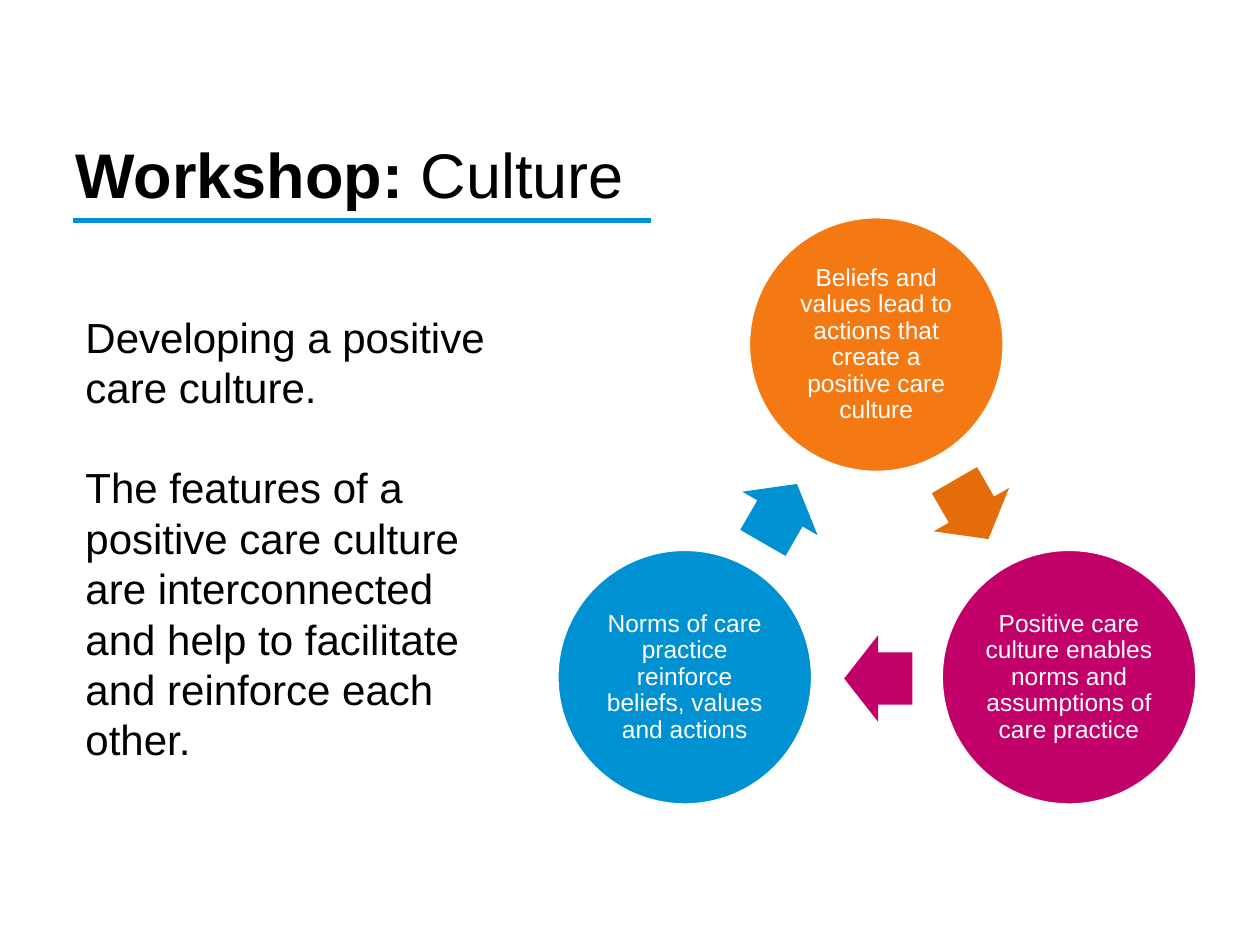
from lxml import etree
from pptx import Presentation
from pptx import util as u
from pptx.dml.color import RGBColor
from pptx.enum import shapes, text
from pptx.oxml import ns

BLACK = RGBColor(0x00, 0x00, 0x00)
WHITE = RGBColor(0xFF, 0xFF, 0xFF)
ORANGE = RGBColor(0xF5, 0x79, 0x13)
RUST = RGBColor(0xE4, 0x6C, 0x0A)
PINK = RGBColor(0xC2, 0x00, 0x6A)
BLUE = RGBColor(0x00, 0x91, 0xD3)

SIDE = 2.03
STAGES = [
    (5.94, 1.72, ORANGE,
     "Beliefs and values lead to actions that create a positive care culture"),
    (7.47, 4.36, PINK,
     "Positive care culture enables norms and assumptions of care practice"),
    (4.42, 4.36, BLUE,
     "Norms of care practice reinforce beliefs, values and actions"),
]
ARROWS = [(7.44, 3.7, 60, RUST), (6.7, 5.04, 180, PINK), (5.92, 3.73, 300, BLUE)]
BODY = [
    "Developing a positive care culture.",
    "The features of a positive care culture are interconnected "
    "and help to facilitate and reinforce each other.",
]


def assign(item, values):
    for name, value in values.items():
        setattr(item, name, value)


def box(*sides):
    return [u.Inches(side) for side in sides]


class Page:
    face = "Arial"

    def __init__(self, deck):
        self.slide = deck.slides.add_slide(deck.slide_layouts[5])
        self.shapes = self.slide.shapes

    def label(self, para, words, size, color, bold=False):
        run = para.add_run()
        run.text = words
        assign(run.font, {"name": self.face, "size": u.Pt(size), "bold": bold})
        run.font.color.rgb = color

    def title(self, lead, rest):
        head = self.shapes.title
        left, top, width, height = box(0.5, 0.75, 9, 1.25)
        assign(head, {"left": left, "top": top, "width": width, "height": height})
        assign(head.text_frame, {"vertical_anchor": text.MSO_ANCHOR.MIDDLE,
                                 "auto_size": text.MSO_AUTO_SIZE.NONE})
        para = head.text_frame.paragraphs[0]
        para.alignment = text.PP_ALIGN.LEFT
        self.label(para, lead, 36, BLACK, True)
        self.label(para, rest, 36, BLACK)

    def shape(self, kind, place, fill):
        item = self.shapes.add_shape(kind, *box(*place))
        item.shadow.inherit = False
        item.fill.solid()
        item.fill.fore_color.rgb = fill
        return item

    def circle(self, left, top, fill, words):
        item = self.shape(shapes.MSO_SHAPE.OVAL, (left, top, SIDE, SIDE), fill)
        item.line.color.rgb = WHITE
        item.line.width = u.Pt(2)
        frame = item.text_frame
        inset = u.Inches(0.02)
        assign(frame, {"word_wrap": True, "vertical_anchor": text.MSO_ANCHOR.MIDDLE,
                       "margin_left": inset, "margin_right": inset,
                       "margin_top": inset, "margin_bottom": inset})
        para = frame.paragraphs[0]
        assign(para, {"alignment": text.PP_ALIGN.CENTER, "line_spacing": 0.9})
        self.label(para, words, 14, WHITE)

    def arrow(self, left, top, angle, fill):
        item = self.shape(shapes.MSO_SHAPE.RIGHT_ARROW, (left, top, 0.54, 0.69), fill)
        item.line.fill.background()
        item.adjustments[0] = 0.6
        item.adjustments[1] = 0.5
        item.rotation = angle

    def body(self, place, lines):
        frame = self.shapes.add_textbox(*box(*place)).text_frame
        assign(frame, {"word_wrap": True,
                       "auto_size": text.MSO_AUTO_SIZE.SHAPE_TO_FIT_TEXT})
        for index, words in enumerate(lines):
            para = frame.add_paragraph() if index else frame.paragraphs[0]
            if index:
                para.space_before = u.Pt(28.5)
            self.label(para, words, 24, BLACK)

    def rule(self, ends, color, width):
        line = self.shapes.add_connector(shapes.MSO_CONNECTOR.STRAIGHT, *box(*ends))
        line.line.color.rgb = color
        line.line.width = u.Pt(width)
        etree.SubElement(line._element.spPr, ns.qn("a:effectLst"))


def main():
    deck = Presentation()
    assign(deck, {"slide_width": u.Inches(10), "slide_height": u.Inches(7.5)})
    page = Page(deck)
    page.title("Workshop: ", "Culture")
    for stage, arrow in zip(STAGES, ARROWS):
        page.circle(*stage)
        page.arrow(*arrow)
    page.body((0.58, 2.42, 3.42, 4.21), BODY)
    page.rule((0.58, 1.75, 5.17, 1.75), BLUE, 3)
    deck.save("out.pptx")


if __name__ == "__main__":
    main()
